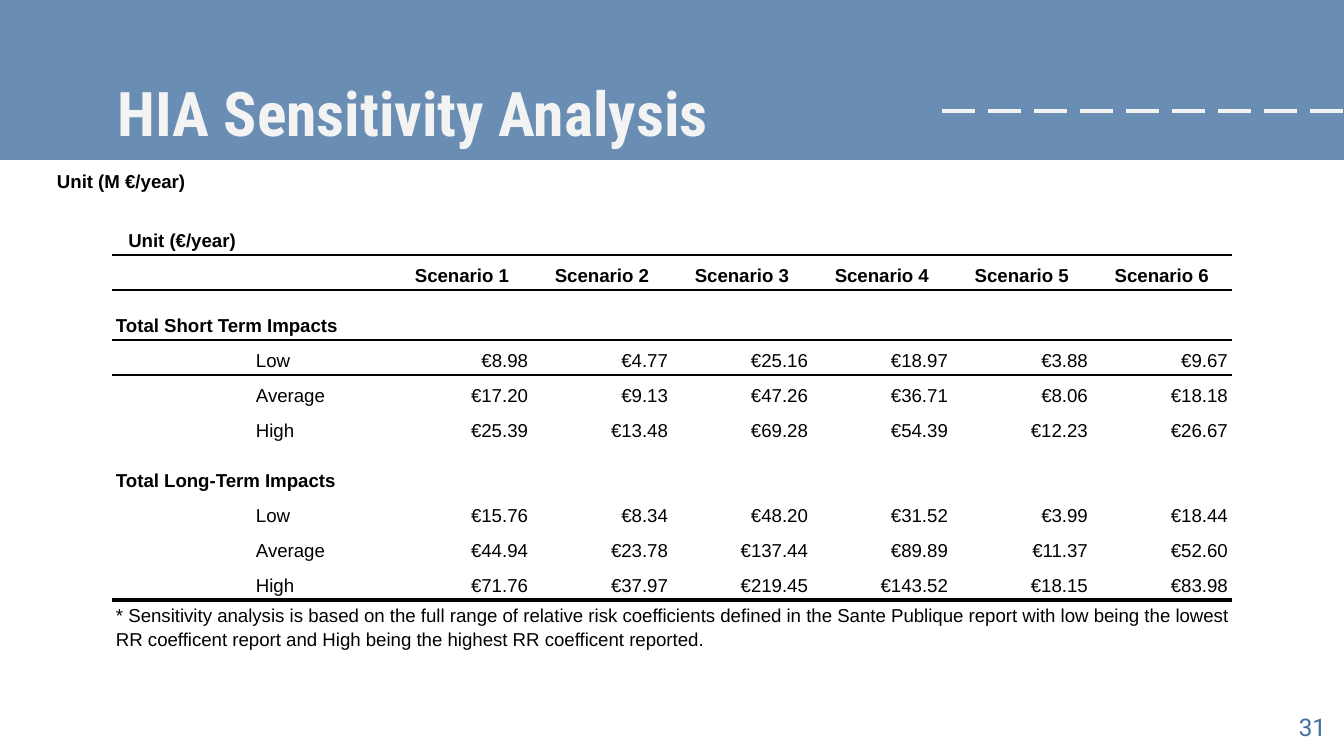
import dataclasses

import pptx
import pptx.dml.color
import pptx.enum.dml
import pptx.enum.shapes
import pptx.enum.text
import pptx.oxml.ns
import pptx.util
from lxml import etree

SCALE = 914400 / 134.4
ALIGN = pptx.enum.text.PP_ALIGN
ANCHOR = pptx.enum.text.MSO_ANCHOR
NO_GRID_STYLE = "{2D5ABB26-0587-4C30-8999-92F81FD0307C}"


@dataclasses.dataclass(frozen=True)
class Theme:
    band: str = "6A8DB4"
    light: str = "F3F3F3"
    accent: str = "436F9E"
    ink: str = "000000"
    paper: str = "FFFFFF"
    title_font: str = "Roboto Condensed"
    number_font: str = "Roboto"
    body_font: str = "Arial"
    title_size: int = 33
    number_size: int = 13
    body_size: int = 10


THEME = Theme()

SCENARIOS = [f"Scenario {n}" for n in range(1, 7)]
SHORT_TERM = [
    ("Low", "€8.98", "€4.77", "€25.16", "€18.97", "€3.88", "€9.67"),
    ("Average", "€17.20", "€9.13", "€47.26", "€36.71", "€8.06", "€18.18"),
    ("High", "€25.39", "€13.48", "€69.28", "€54.39", "€12.23", "€26.67"),
]
LONG_TERM = [
    ("Low", "€15.76", "€8.34", "€48.20", "€31.52", "€3.99", "€18.44"),
    ("Average", "€44.94", "€23.78", "€137.44", "€89.89", "€11.37", "€52.60"),
    ("High", "€71.76", "€37.97", "€219.45", "€143.52", "€18.15", "€83.98"),
]
FOOTNOTE = (
    "* Sensitivity analysis is based on the full range of relative risk "
    "coefficients defined in the Sante Publique report with low being the "
    "lowest RR coefficent report and High being the highest RR coefficent reported."
)
ROWS = [
    ["Unit (€/year)"],
    ["", "", *SCENARIOS],
    ["Total Short Term Impacts"],
    *[["", *row] for row in SHORT_TERM],
    ["Total Long-Term Impacts"],
    *[["", *row] for row in LONG_TERM],
    [FOOTNOTE],
]
COLUMNS = 8
SPANNED_ROWS = (2, 6, 10)
BOLD_ROWS = (0, 1, 2, 6)
CENTRED_ROWS = (0, 1)
RULES_BELOW = {0: 1.5, 1: 1.5, 2: 1.5, 9: 2.25}


def px(n):
    return pptx.util.Emu(round(n * SCALE))


def rgb(color):
    return pptx.dml.color.RGBColor.from_string(color)


def write(tf, text, *, size=THEME.body_size, font=THEME.body_font,
          color=THEME.ink, bold=False, align=ALIGN.LEFT, spacing=1.0):
    p = tf.paragraphs[0]
    p.alignment = align
    p.line_spacing = spacing
    if not text:
        p._p.get_or_add_endParaRPr().set("sz", str(size * 100))
        return
    r = p.add_run()
    r.text = text
    r.font.size = pptx.util.Pt(size)
    r.font.name = font
    r.font.bold = bold
    r.font.color.rgb = rgb(color)


def set_frame(tf, inset, anchor=ANCHOR.TOP):
    tf.word_wrap = True
    tf.auto_size = pptx.enum.text.MSO_AUTO_SIZE.NONE
    tf.vertical_anchor = anchor
    tf.margin_left = tf.margin_right = px(inset)
    tf.margin_top = tf.margin_bottom = px(inset)


def add_text(s, box, text, *, anchor=ANCHOR.TOP, **style):
    sp = s.shapes.add_textbox(*map(px, box))
    set_frame(sp.text_frame, 13, anchor)
    write(sp.text_frame, text, **style)


def add_header(s, box, text):
    x, y, w, h = box
    band = s.shapes.add_shape(
        pptx.enum.shapes.MSO_SHAPE.RECTANGLE, *map(px, box))
    band.shadow.inherit = False
    band.fill.solid()
    band.fill.fore_color.rgb = rgb(THEME.band)
    band.line.fill.background()

    dash = s.shapes.add_connector(
        pptx.enum.shapes.MSO_CONNECTOR.STRAIGHT,
        px(x + 942), px(y + 111), px(x + w), px(y + 111))
    dash.line.color.rgb = rgb(THEME.light)
    dash.line.width = pptx.util.Pt(2.25)
    dash.line.dash_style = pptx.enum.dml.MSO_LINE.LONG_DASH
    etree.SubElement(dash._element.spPr, pptx.oxml.ns.qn("a:effectLst"))

    title = s.shapes.title
    s.shapes._spTree.append(title._element)
    title.left, title.top = px(x + 105), px(y + 62)
    title.width, title.height = px(w - 210), px(85)
    set_frame(title.text_frame, 13)
    write(title.text_frame, text, size=THEME.title_size,
          font=THEME.title_font, color=THEME.light, bold=True)


def set_borders(cell, **widths):
    tcPr = cell._tc.get_or_add_tcPr()
    edges = [(tag, width) for tag, width in widths.items() if width]
    for i, (tag, width) in enumerate(edges):
        ln = etree.Element(pptx.oxml.ns.qn(f"a:{tag}"),
                           w=str(pptx.util.Pt(width)))
        fill = etree.SubElement(ln, pptx.oxml.ns.qn("a:solidFill"))
        etree.SubElement(fill, pptx.oxml.ns.qn("a:srgbClr"), val=THEME.ink)
        tcPr.insert(i, ln)


def cell_align(row, col):
    if row in CENTRED_ROWS:
        return ALIGN.CENTER
    return ALIGN.RIGHT if col > 1 else ALIGN.LEFT


def add_impact_table(s, box):
    x, y, w, h = box
    frame = s.shapes.add_table(len(ROWS), COLUMNS, *map(px, box))
    table = frame.table
    table.first_row = table.horz_banding = False
    table._tbl.tblPr[0].text = NO_GRID_STYLE
    for column in table.columns:
        column.width = px(w // COLUMNS)
    for i, texts in enumerate(ROWS):
        table.rows[i].height = px(50 if i in SPANNED_ROWS else 35)
        for j in range(COLUMNS):
            cell = table.cell(i, j)
            cell.margin_left = cell.margin_right = px(4)
            cell.margin_top = cell.margin_bottom = px(3)
            cell.vertical_anchor = ANCHOR.BOTTOM
            cell.fill.solid()
            cell.fill.fore_color.rgb = rgb(THEME.paper)
            set_borders(cell, lnT=RULES_BELOW.get(i - 1), lnB=RULES_BELOW.get(i))
            write(cell.text_frame, texts[j] if j < len(texts) else "",
                  bold=i in BOLD_ROWS, align=cell_align(i, j), spacing=1.15)
        if i in SPANNED_ROWS:
            table.cell(i, 0).merge(table.cell(i, COLUMNS - 1))


def main():
    prs = pptx.Presentation()
    prs.slide_width, prs.slide_height = px(1344), px(756)
    s = prs.slides.add_slide(prs.slide_layouts[5])
    add_header(s, (0, 0, 1344, 160), "HIA Sensitivity Analysis")
    add_text(s, (1258, 698, 81, 58), "31", anchor=ANCHOR.MIDDLE,
             size=THEME.number_size, font=THEME.number_font,
             color=THEME.accent, align=ALIGN.RIGHT)
    add_impact_table(s, (112, 220, 1120, 430))
    add_text(s, (44, 157, 441, 50), "Unit (M €/year)", bold=True)
    prs.save("out.pptx")


if __name__ == "__main__":
    main()
